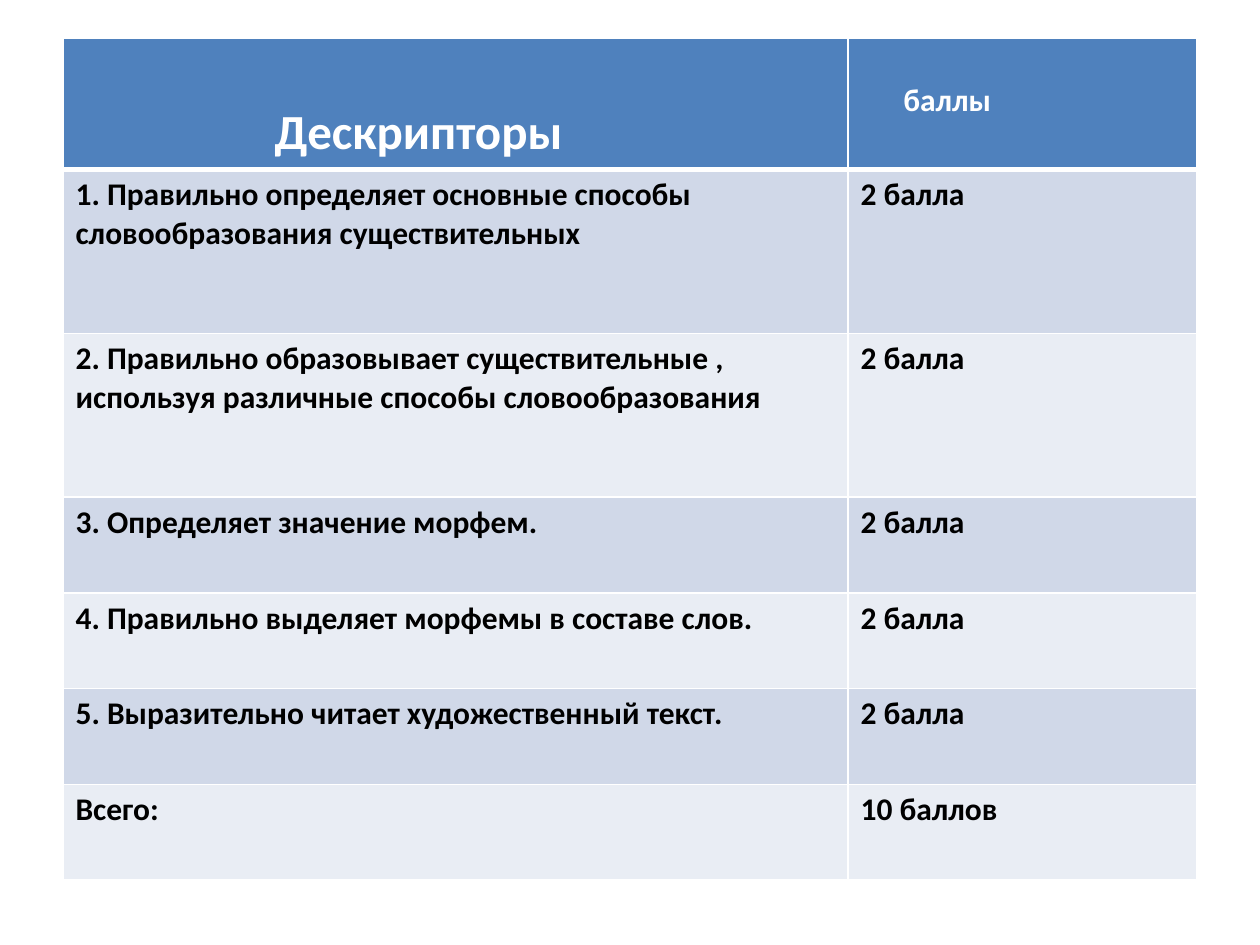
from dataclasses import dataclass

from lxml.etree import SubElement
from pptx import Presentation
from pptx.dml.color import RGBColor
from pptx.oxml.ns import qn
from pptx.util import Inches, Pt

WHITE = RGBColor(0xFF, 0xFF, 0xFF)
BLACK = RGBColor(0x00, 0x00, 0x00)
BLUE = RGBColor(0x4F, 0x81, 0xBD)
BANDS = (RGBColor(0xD0, 0xD8, 0xE8), RGBColor(0xE9, 0xED, 0xF4))

SLIDE_W, SLIDE_H = Inches(10), Inches(7.5)
LEFT, TOP, WIDTH = 0.05 * SLIDE_W, 0.04 * SLIDE_H, 0.9 * SLIDE_W
COLUMN_INCHES = (6.23, 2.77)
HEADER_INCHES, TALL_INCHES, SHORT_INCHES = 1.04, 1.3, 0.76


@dataclass(frozen=True)
class Criterion:
    text: str
    points: str = "2 балла"
    height: float = SHORT_INCHES


CRITERIA = (
    Criterion("1. Правильно определяет основные способы словообразования существительных",
              height=TALL_INCHES),
    Criterion("2. Правильно образовывает существительные , используя различные способы словообразования",
              height=TALL_INCHES),
    Criterion("3. Определяет значение морфем."),
    Criterion("4. Правильно выделяет морфемы в составе слов."),
    Criterion("5. Выразительно читает художественный текст."),
    Criterion("Всего:", points="10 баллов"),
)


def set_borders(cell, bottom: float = 1, top: float = 1) -> None:
    """Draw white borders, given in points; they must precede the fill."""
    tc_pr = cell._tc.get_or_add_tcPr()
    for tag, width in (("a:lnL", 1), ("a:lnR", 1), ("a:lnT", top), ("a:lnB", bottom)):
        ln = SubElement(tc_pr, qn(tag), w=str(Pt(width)))
        fill = SubElement(ln, qn("a:solidFill"))
        SubElement(fill, qn("a:srgbClr"), val=str(WHITE))


def write_cell(cell, text: str, *, fill: RGBColor, color: RGBColor = BLACK,
               size: float = 18, left: float = 0.1, top: float = 0.05,
               border_top: float = 1, border_bottom: float = 1) -> None:
    set_borders(cell, border_bottom, border_top)
    cell.fill.solid()
    cell.fill.fore_color.rgb = fill
    cell.margin_left, cell.margin_top = Inches(left), Inches(top)
    r = cell.text_frame.paragraphs[0].add_run()
    r.text = text
    r.font.name, r.font.size, r.font.bold = "Calibri", Pt(size), True
    r.font.color.rgb = color


def add_criteria_table(s) -> None:
    heights = [HEADER_INCHES] + [c.height for c in CRITERIA]
    table = s.shapes.add_table(len(heights), len(COLUMN_INCHES), int(LEFT), int(TOP),
                               int(WIDTH), Inches(sum(heights))).table
    for column, width in zip(table.columns, COLUMN_INCHES):
        column.width = Inches(width)
    for row, height in zip(table.rows, heights):
        row.height = Inches(height)

    header = dict(fill=BLUE, color=WHITE, border_bottom=3)
    write_cell(table.cell(0, 0), "Дескрипторы", size=28, left=1.68, top=0.52, **header)
    write_cell(table.cell(0, 1), "баллы", left=0.44, top=0.35, **header)
    for i, criterion in enumerate(CRITERIA):
        for j, text in enumerate((criterion.text, criterion.points)):
            write_cell(table.cell(i + 1, j), text, fill=BANDS[i % 2],
                       border_top=1 if i else 3)


def main() -> None:
    prs = Presentation()
    prs.slide_width, prs.slide_height = SLIDE_W, SLIDE_H
    s = prs.slides.add_slide(prs.slide_layouts[6])
    add_criteria_table(s)
    prs.save("out.pptx")


if __name__ == "__main__":
    main()
